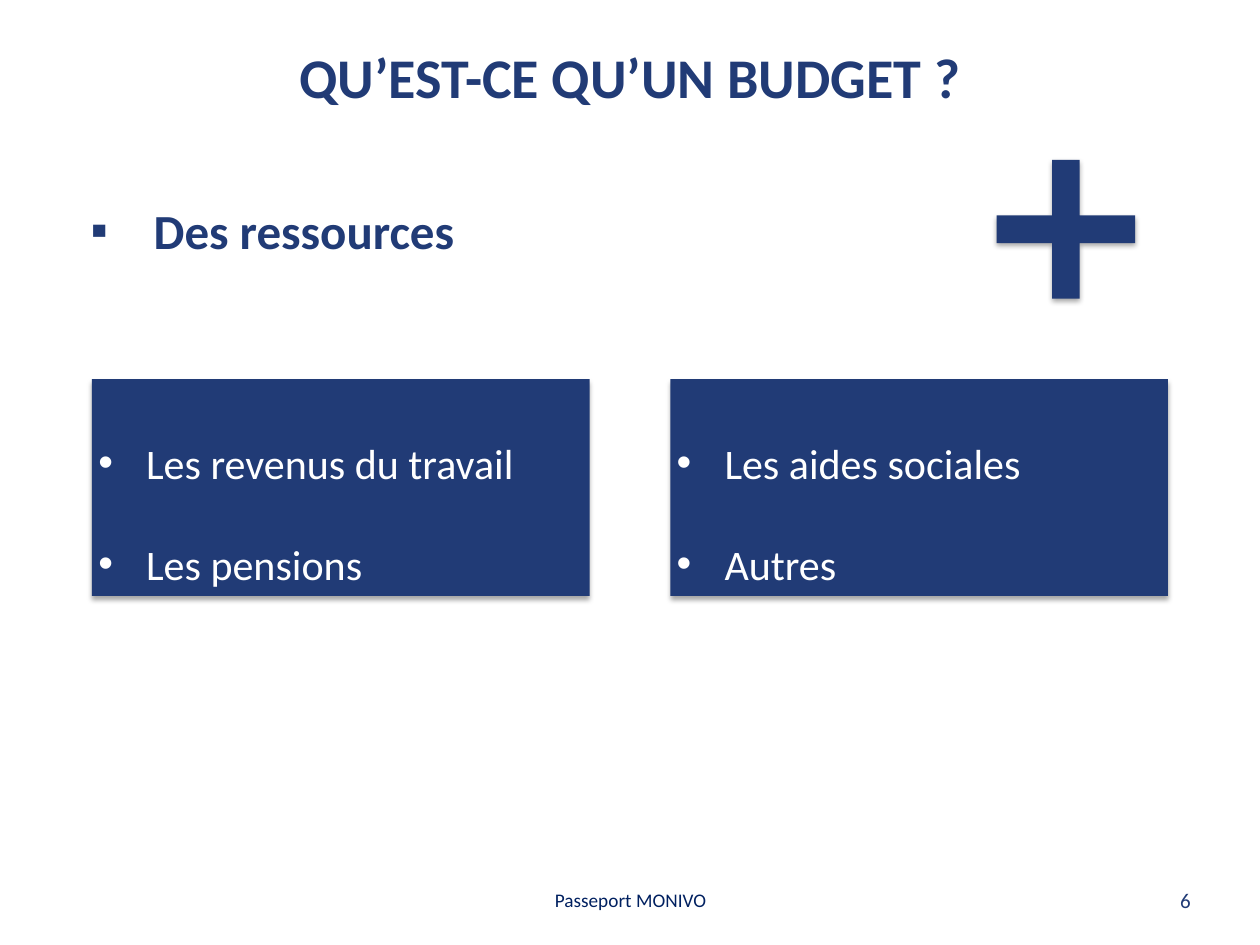
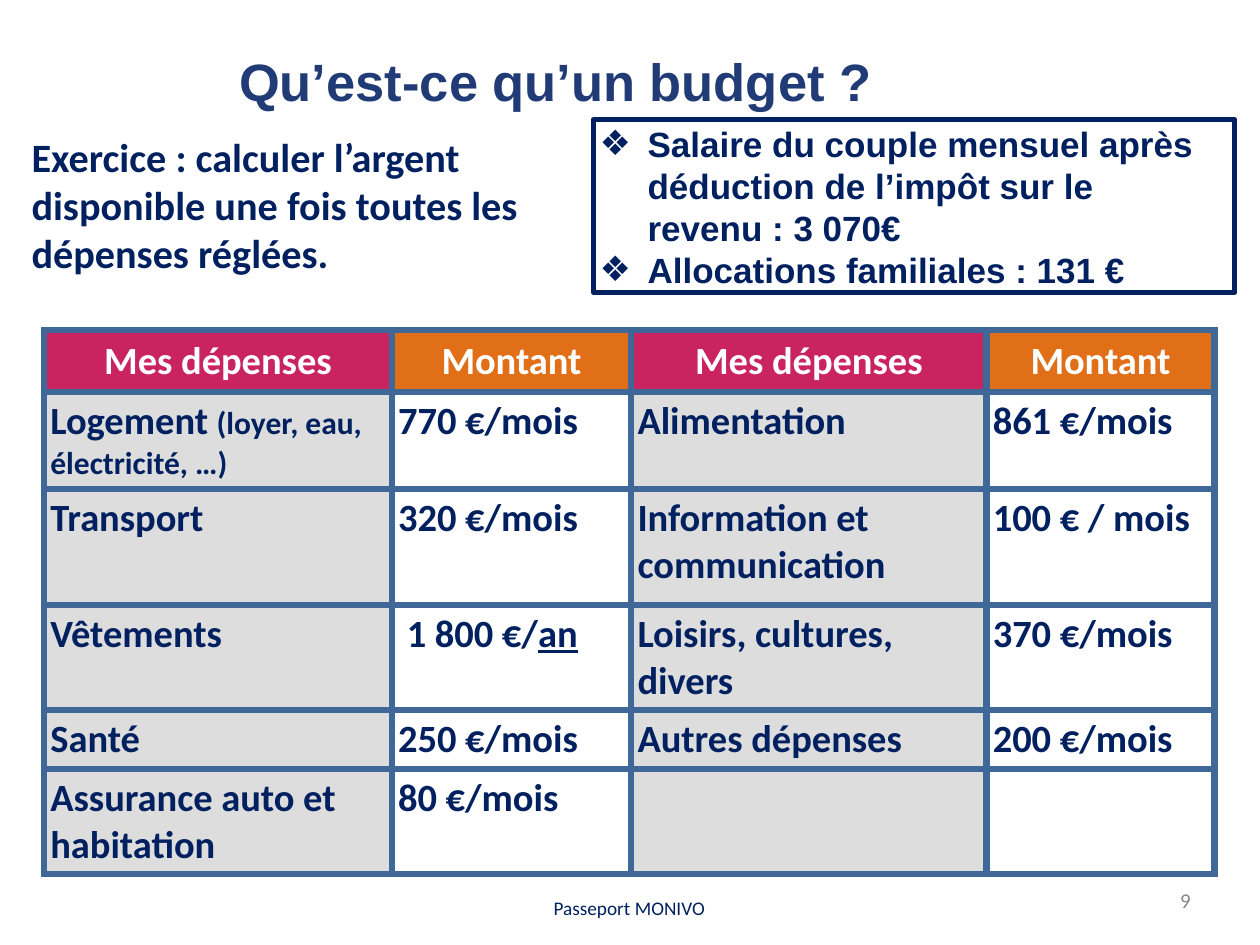
from dataclasses import dataclass, replace

from lxml import etree
from pptx import Presentation
from pptx.dml.color import RGBColor
from pptx.enum.shapes import MSO_SHAPE
from pptx.enum.text import MSO_ANCHOR, PP_ALIGN
from pptx.oxml.ns import qn
from pptx.util import Inches, Pt

NAVY = RGBColor(0x21, 0x3B, 0x76)
INK = RGBColor(0x00, 0x20, 0x60)
GRAY = RGBColor(0x88, 0x88, 0x88)
LIGHT_GRAY = RGBColor(0xDD, 0xDD, 0xDD)
WHITE = RGBColor(0xFF, 0xFF, 0xFF)
PINK = RGBColor(0xC9, 0x23, 0x60)
ORANGE = RGBColor(0xE0, 0x6F, 0x17)
STEEL = RGBColor(0x3F, 0x67, 0x97)

RECTANGLE, CROSS = MSO_SHAPE.RECTANGLE, MSO_SHAPE.CROSS
LEFT, CENTER, RIGHT, JUSTIFY = PP_ALIGN.LEFT, PP_ALIGN.CENTER, PP_ALIGN.RIGHT, PP_ALIGN.JUSTIFY
TOP, MIDDLE = MSO_ANCHOR.TOP, MSO_ANCHOR.MIDDLE
INSET = Inches(0.05)


@dataclass(frozen=True)
class Box:
    """Place and size in inches."""
    left: float
    top: float
    width: float
    height: float

    def lengths(self) -> tuple:
        """Return the four values as lengths."""
        return tuple(Inches(value) for value in (self.left, self.top, self.width, self.height))


@dataclass(frozen=True)
class Style:
    """Look of the paragraphs in one text frame."""
    size: float
    color: RGBColor = INK
    font: str = "Calibri"
    bold: bool = False
    align: PP_ALIGN = LEFT
    anchor: MSO_ANCHOR = TOP
    bullet: str = ""
    indent: float = 0.38
    line_spacing: float = 1.0
    space_before: float = 0


@dataclass(frozen=True)
class Run:
    """Piece of a cell text that differs from its neighbours."""
    text: str
    size: float = 22
    underline: bool = False


TITLE = Style(32, NAVY, bold=True, align=CENTER)
HEADING = Style(28, NAVY, bold=True, align=JUSTIFY, bullet="▪", indent=0.5, space_before=6)
CARD = Style(24, WHITE, anchor=MIDDLE, bullet="•", line_spacing=2.0)
EXERCISE = Style(23, bold=True, space_before=5)
INCOME = Style(20, font="Arial", bold=True, anchor=MIDDLE, bullet="❖")
FOOTER = Style(11, align=CENTER, anchor=MIDDLE)
PAGE_NUMBER = Style(12, NAVY, align=RIGHT, anchor=MIDDLE)
CELL = Style(22, bold=True)
HEADER_CELL = replace(CELL, color=WHITE, align=CENTER, anchor=MIDDLE)

RESOURCES = (
    ("Les revenus du travail", "Les pensions"),
    ("Les aides sociales", "Autres"),
)
INCOMES = (
    "Salaire du couple mensuel après déduction de l’impôt sur le revenu : 3 070€",
    "Allocations familiales : 131 €",
)
EXPENSES = (
    ("Mes dépenses", "Montant", "Mes dépenses", "Montant"),
    ((Run("Logement "), Run("(loyer, eau, électricité, …)", 18)), "770 €/mois",
     "Alimentation", "861 €/mois"),
    ("Transport", "320 €/mois", "Information et communication", "100 € / mois"),
    ("Vêtements", (Run(" 1 800 €/"), Run("an", underline=True)),
     "Loisirs, cultures, divers", "370 €/mois"),
    ("Santé", "250 €/mois", "Autres dépenses", "200 €/mois"),
    ("Assurance auto et habitation", "80 €/mois", "", ""),
)
COLUMN_WIDTHS = (2.76, 1.9, 2.82, 1.81)
ROW_HEIGHTS = (0.49, 0.77, 0.92, 0.83, 0.47, 0.83)


def apply_font(font, style: Style) -> None:
    """Set face, size, weight and colour."""
    font.name = style.font
    font.size = Pt(style.size)
    font.bold = style.bold
    font.color.rgb = style.color


def add_bullet(paragraph, style: Style) -> None:
    """Give a paragraph a bullet with a hanging indent."""
    properties = paragraph._p.get_or_add_pPr()
    properties.set("marL", str(Inches(style.indent)))
    properties.set("indent", str(-Inches(style.indent)))
    bullet_font = etree.Element(qn("a:buFont"), typeface="Arial")
    bullet = etree.Element(qn("a:buChar"), char=style.bullet)
    properties.extend((bullet_font, bullet))


def set_margins(holder) -> None:
    """Set equal insets on a text frame or a cell."""
    holder.margin_left = holder.margin_right = INSET
    holder.margin_top = holder.margin_bottom = INSET


def write(frame, lines: tuple, style: Style) -> None:
    """Fill a text frame with one paragraph per line."""
    set_margins(frame)
    frame.word_wrap = True
    frame.vertical_anchor = style.anchor
    for index, line in enumerate(lines):
        paragraph = frame.add_paragraph() if index else frame.paragraphs[0]
        paragraph.text = line
        paragraph.alignment = style.align
        paragraph.line_spacing = style.line_spacing
        paragraph.space_before = Pt(style.space_before)
        if style.bullet:
            add_bullet(paragraph, style)
        apply_font(paragraph.font, style)


def add_text(slide, box: Box, lines: tuple, style: Style) -> None:
    """Add a text box."""
    write(slide.shapes.add_textbox(*box.lengths()).text_frame, lines, style)


def add_shadowed_shape(slide, kind: MSO_SHAPE, box: Box):
    """Add a navy shape with a soft shadow below it."""
    shape = slide.shapes.add_shape(kind, *box.lengths())
    shape.fill.solid()
    shape.fill.fore_color.rgb = NAVY
    shape.line.fill.background()
    shape.shadow.inherit = False
    effects = shape._element.spPr.find(qn("a:effectLst"))
    shadow = etree.SubElement(effects, qn("a:outerShdw"), blurRad=str(Pt(3)),
                              dist=str(Pt(1.8)), dir="5400000", rotWithShape="0")
    color = etree.SubElement(shadow, qn("a:srgbClr"), val="000000")
    etree.SubElement(color, qn("a:alpha"), val="35000")
    return shape


def add_outline(slide, box: Box) -> None:
    """Add an unfilled frame."""
    frame = slide.shapes.add_shape(RECTANGLE, *box.lengths())
    frame.shadow.inherit = False
    frame.fill.background()
    frame.line.color.rgb = INK
    frame.line.width = Pt(3)


def add_footer(slide, number: str, box: Box, number_color: RGBColor) -> None:
    """Add the footer line and the page number."""
    add_text(slide, box, ("Passeport MONIVO",), FOOTER)
    add_text(slide, Box(9.21, 7, 0.29, 0.29), (number,), replace(PAGE_NUMBER, color=number_color))


def set_borders(cell) -> None:
    """Draw all four borders of a cell."""
    properties = cell._tc.get_or_add_tcPr()
    for index, side in enumerate(("lnL", "lnR", "lnT", "lnB")):
        line = etree.Element(qn(f"a:{side}"), w=str(Pt(4)))
        fill = etree.SubElement(line, qn("a:solidFill"))
        etree.SubElement(fill, qn("a:srgbClr"), val=str(STEEL))
        properties.insert(index, line)


def fill_cell(cell, content: str | tuple, style: Style, color: RGBColor) -> None:
    """Write and colour one table cell."""
    set_margins(cell)
    cell.vertical_anchor = style.anchor
    cell.fill.solid()
    cell.fill.fore_color.rgb = color
    set_borders(cell)
    paragraph = cell.text_frame.paragraphs[0]
    paragraph.alignment = style.align
    if isinstance(content, str):
        paragraph.text = content
        apply_font(paragraph.font, style)
        return
    for part in content:
        run = paragraph.add_run()
        run.text = part.text
        apply_font(run.font, replace(style, size=part.size))
        run.font.underline = part.underline


def add_expense_table(slide) -> None:
    """Add the table of expenses."""
    box = Box(0.35, 2.62, sum(COLUMN_WIDTHS), sum(ROW_HEIGHTS))
    table = slide.shapes.add_table(len(ROW_HEIGHTS), len(COLUMN_WIDTHS), *box.lengths()).table
    table.first_row = table.horz_banding = False
    for column, width in zip(table.columns, COLUMN_WIDTHS):
        column.width = Inches(width)
    for row, height, contents in zip(table.rows, ROW_HEIGHTS, EXPENSES):
        row.height = Inches(height)
        is_header = contents is EXPENSES[0]
        colors = (PINK, ORANGE) if is_header else (LIGHT_GRAY, WHITE)
        for index, (cell, content) in enumerate(zip(row.cells, contents)):
            fill_cell(cell, content, HEADER_CELL if is_header else CELL, colors[index % 2])


def build_resources(slide) -> None:
    """Build the slide on resources."""
    add_text(slide, Box(0.67, 1.54, 3.8, 0.57), ("Des ressources",), HEADING)
    add_text(slide, Box(1.38, 0.29, 7.24, 0.72), ("QU’EST-CE QU’UN BUDGET ?",), TITLE)
    plus = add_shadowed_shape(slide, CROSS, Box(7.91, 1.27, 1.1, 1.1))
    plus.adjustments[0] = 0.4
    add_footer(slide, "6", Box(3.42, 7, 3.17, 0.29), NAVY)
    for index, lines in enumerate(RESOURCES):
        card = add_shadowed_shape(slide, RECTANGLE, Box(0.73 + 4.59 * index, 3.01, 3.95, 1.72))
        write(card.text_frame, lines, CARD)


def build_exercise(slide) -> None:
    """Build the slide with the budget exercise."""
    add_text(slide, Box(0.2, 1, 4.39, 1.26),
             ("Exercice : calculer l’argent disponible une fois toutes les dépenses réglées.",),
             EXERCISE)
    add_outline(slide, Box(4.71, 0.95, 5.09, 1.37))
    add_text(slide, Box(4.71, 0.91, 4.92, 1.45), INCOMES, INCOME)
    add_expense_table(slide)
    add_text(slide, Box(0.59, 0.34, 7.64, 0.61), ("Qu’est-ce qu’un budget ?",),
             replace(TITLE, size=30, font="Arial"))
    add_footer(slide, "9", Box(3.41, 7.06, 3.17, 0.29), GRAY)


def main() -> None:
    """Build and save the presentation."""
    presentation = Presentation()
    presentation.slide_width = Inches(10)
    presentation.slide_height = Inches(7.5)
    for build in (build_resources, build_exercise):
        build(presentation.slides.add_slide(presentation.slide_layouts[6]))
    presentation.save("out.pptx")


if __name__ == "__main__":
    main()
